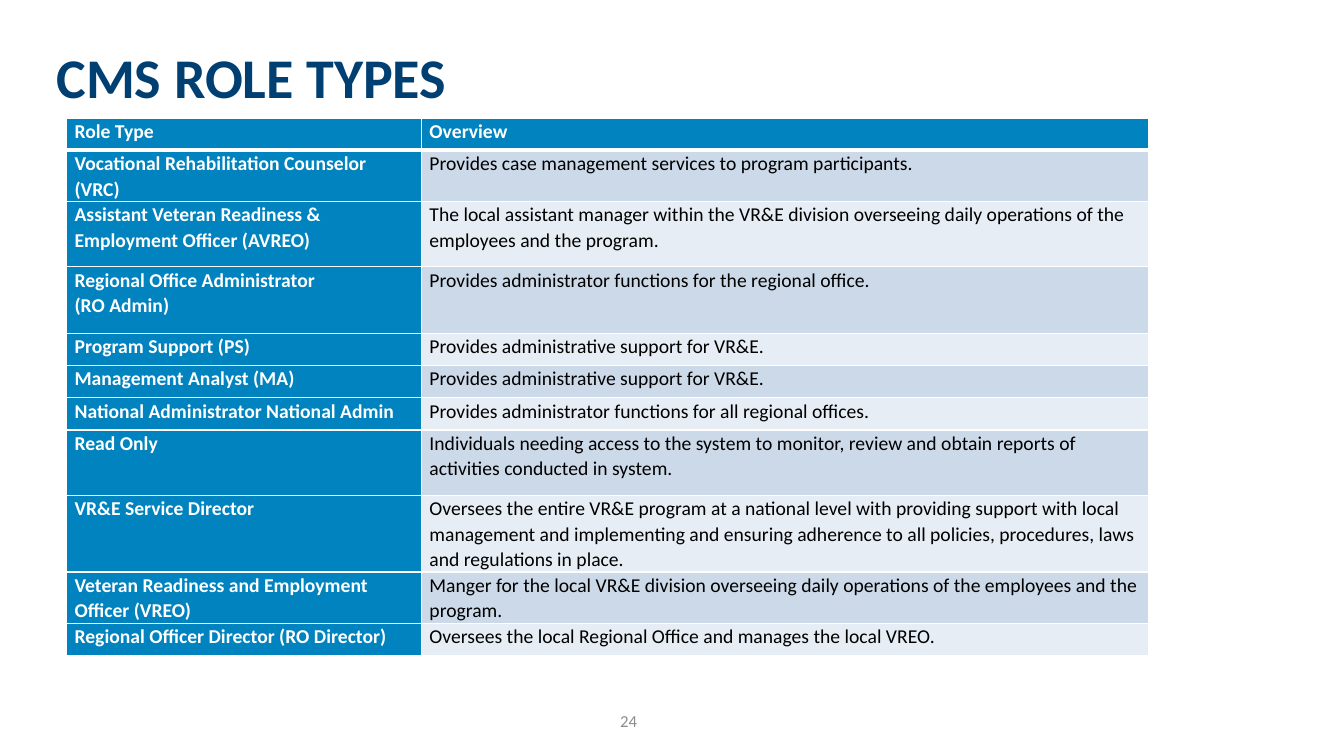
from pptx import Presentation
from pptx.util import Inches, Pt
from pptx.dml.color import RGBColor as RGB
from pptx.enum.text import PP_ALIGN as Align, MSO_ANCHOR as Anchor, MSO_AUTO_SIZE as Auto
from pptx.oxml import parse_xml
from pptx.oxml.ns import nsdecls

HUES = {"navy": "003F72", "blue": "0083BE", "dark": "CCD9E8", "light": "E7EDF4",
        "white": "FFFFFF", "black": "000000", "gray": "8C8C8C"}


def write(frame, text, size=14, hue="black", bold=False, align=Align.LEFT, space=1.0):
    frame.word_wrap = True
    frame.text = text
    for para in frame.paragraphs:
        para.alignment = align
        para.line_spacing = space
        font = para.font
        for run in para.runs:
            font = run.font
            font.name = "Calibri"
            font.size = Pt(size)
            font.bold = bold
            font.color.rgb = RGB.from_string(HUES[hue])


def edge(cell, side, width):
    cell._tc.get_or_add_tcPr().append(parse_xml(
        f'<a:ln{side} {nsdecls("a")} w="{Pt(width)}"><a:solidFill>'
        f'<a:srgbClr val="{HUES["white"]}"/></a:solidFill></a:ln{side}>'))


deck = Presentation()
deck.slide_width, deck.slide_height = Inches(13.33), Inches(7.5)
slide = deck.slides.add_slide(deck.slide_layouts[5])

# Title
title = slide.shapes.title
title.left, title.top = Inches(0.46), Inches(0.37)
title.width, title.height = Inches(10.63), Inches(0.85)
frame = title.text_frame
frame.auto_size = Auto.NONE
frame.vertical_anchor = Anchor.MIDDLE
write(frame, "CMS ROLE TYPES", size=40, hue="navy", bold=True, space=0.9)

# Role table: row height, role, overview
roles = [
    (0.32, "Role Type", "Overview"),
    (0.5, "Vocational Rehabilitation Counselor (VRC)",
     "Provides case management services to program participants."),
    (0.65, "Assistant Veteran Readiness & Employment Officer (AVREO)",
     "The local assistant manager within the VR&E division overseeing daily operations "
     "of the employees and the program."),
    (0.66, "Regional Office Administrator\n(RO Admin)",
     "Provides administrator functions for the regional office."),
    (0.32, "Program Support (PS)", "Provides administrative support for VR&E."),
    (0.32, "Management Analyst (MA)", "Provides administrative support for VR&E."),
    (0.32, "National Administrator National Admin",
     "Provides administrator functions for all regional offices."),
    (0.65, "Read Only",
     "Individuals needing access to the system to monitor, review and obtain reports "
     "of activities conducted in system."),
    (0.76, "VR&E Service Director",
     "Oversees the entire VR&E program at a national level with providing support with "
     "local management and implementing and ensuring adherence to all policies, "
     "procedures, laws and regulations in place."),
    (0.5, "Veteran Readiness and Employment Officer (VREO)",
     "Manger for the local VR&E division overseeing daily operations of the employees "
     "and the program."),
    (0.32, "Regional Officer Director (RO Director)",
     "Oversees the local Regional Office and manages the local VREO."),
]
table = slide.shapes.add_table(len(roles), 2, Inches(0.66), Inches(1.17),
                               Inches(10.73), Inches(5.33)).table
table.first_col = True
for col, width in zip(table.columns, (3.52, 7.21)):
    col.width = Inches(width)

for i, (height, *texts) in enumerate(roles):
    table.rows[i].height = Inches(height)
    for j, text in enumerate(texts):
        cell = table.cell(i, j)
        head = i == 0 or j == 0
        cell.margin_left = cell.margin_right = Inches(0.08)
        cell.margin_top = cell.margin_bottom = 0
        write(cell.text_frame, text, hue="white" if head else "black",
              bold=head, space=1.07)
        # The rule under the header row is thicker
        for side, width in (("L", 1), ("R", 1), ("T", 3 if i == 1 else 1),
                            ("B", 3 if i == 0 else 1)):
            edge(cell, side, width)
        band = "dark" if i % 2 else "light"
        cell.fill.solid()
        cell.fill.fore_color.rgb = RGB.from_string(HUES["blue" if head else band])

# Page number
page = slide.shapes.add_textbox(Inches(5.86), Inches(6.95), Inches(0.75), Inches(0.4))
page.text_frame.vertical_anchor = Anchor.MIDDLE
write(page.text_frame, "24", size=12, hue="gray", align=Align.CENTER)

deck.save("out.pptx")
